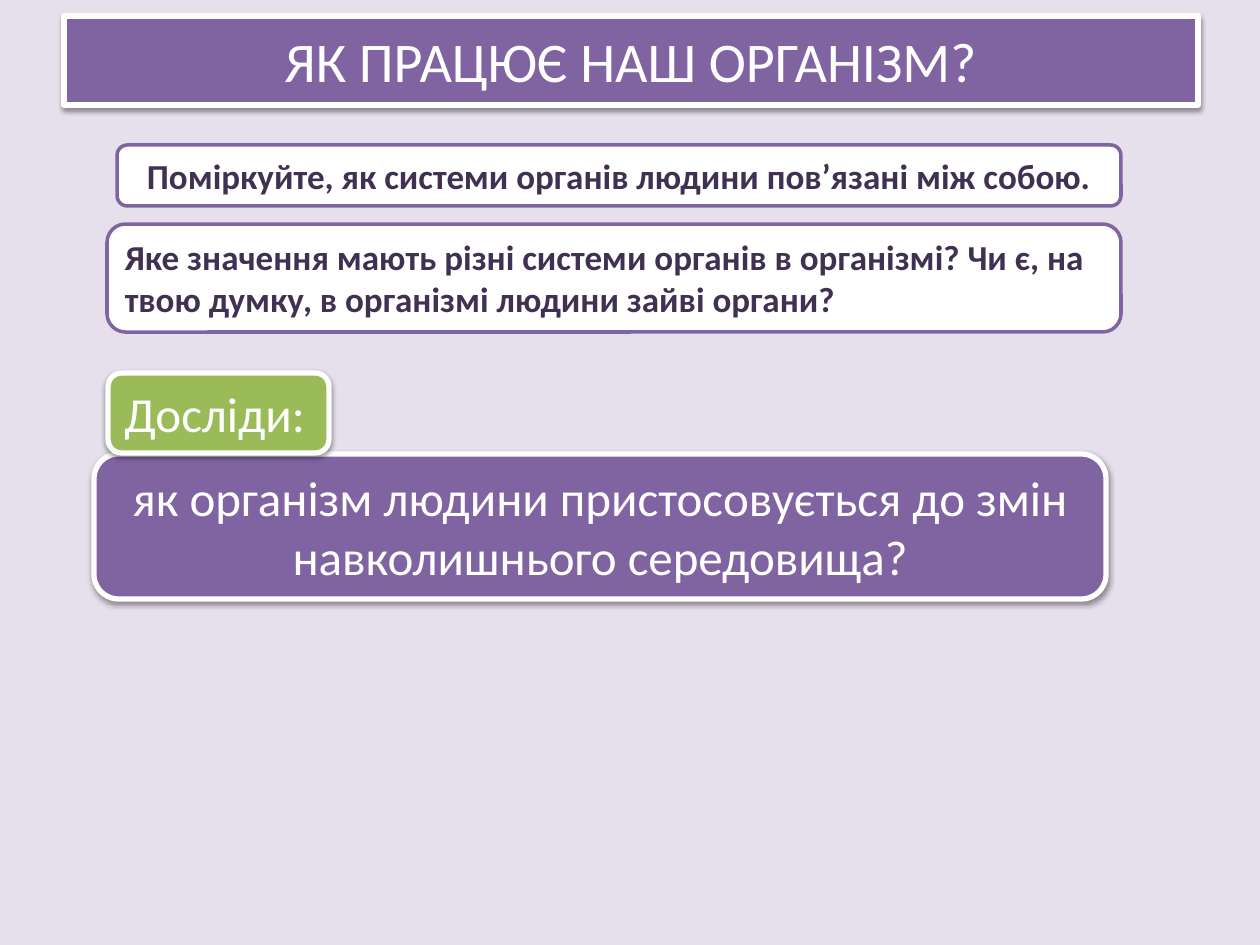
from dataclasses import dataclass

from lxml import etree
from pptx import Presentation
from pptx.dml.color import RGBColor
from pptx.enum.shapes import MSO_SHAPE
from pptx.enum.text import MSO_ANCHOR, MSO_AUTO_SIZE, PP_ALIGN
from pptx.oxml.ns import qn
from pptx.util import Pt

ROUNDED = MSO_SHAPE.ROUNDED_RECTANGLE
LEFT, CENTER = PP_ALIGN.LEFT, PP_ALIGN.CENTER
TOP, MIDDLE = MSO_ANCHOR.TOP, MSO_ANCHOR.MIDDLE
GROW, FIXED = MSO_AUTO_SIZE.SHAPE_TO_FIT_TEXT, MSO_AUTO_SIZE.NONE

WHITE = RGBColor(0xFF, 0xFF, 0xFF)
LAVENDER = RGBColor(0xE6, 0xE0, 0xEC)
PURPLE = RGBColor(0x80, 0x64, 0xA2)
DARK_PURPLE = RGBColor(0x40, 0x31, 0x52)
GREEN = RGBColor(0x9B, 0xBB, 0x59)

PIXELS_PER_INCH = 126
FONT = "Calibri"


@dataclass(frozen=True)
class Style:
    fill: RGBColor
    line: RGBColor
    line_width: int
    text: RGBColor
    bold: bool
    shadow: bool


@dataclass(frozen=True)
class Panel:
    text: str
    left: int
    top: int
    width: int
    height: int
    style: Style
    size: int
    align: PP_ALIGN = CENTER
    anchor: MSO_ANCHOR = TOP
    auto_size: MSO_AUTO_SIZE = GROW
    corner: float = 0.17


QUESTION = Style(WHITE, PURPLE, 2, DARK_PURPLE, True, False)
ACCENT = Style(PURPLE, WHITE, 3, WHITE, False, True)
LABEL = Style(GREEN, WHITE, 3, WHITE, False, True)

PANELS = (
    Panel("ЯК ПРАЦЮЄ НАШ ОРГАНІЗМ?", 64, 16, 1134, 89, ACCENT, 32,
          anchor=MIDDLE, auto_size=FIXED, corner=0),
    Panel("Поміркуйте, як системи органів людини пов’язані між собою.",
          117, 145, 1004, 61, QUESTION, 20),
    Panel("як організм людини пристосовується до змін навколишнього середовища?",
          94, 454, 1012, 145, ACCENT, 28),
    Panel("Яке значення мають різні системи органів в організмі? "
          "Чи є, на твою думку, в організмі людини зайві органи?",
          107, 224, 1014, 108, QUESTION, 20, align=LEFT),
    Panel("Досліди:", 108, 373, 221, 80, LABEL, 28, align=LEFT),
)


def px(length: int) -> int:
    return round(length * 914400 / PIXELS_PER_INCH)


def add_shadow(shape) -> None:
    effects = shape._element.spPr.find(qn("a:effectLst"))
    shadow = etree.SubElement(
        effects, qn("a:outerShdw"), blurRad=str(Pt(3.1)), dist=str(Pt(1.6)),
        dir="5400000", rotWithShape="0")
    color = etree.SubElement(shadow, qn("a:srgbClr"), val="000000")
    etree.SubElement(color, qn("a:alpha"), val="38000")


def add_panel(slide, panel: Panel) -> None:
    style = panel.style
    shape = slide.shapes.add_shape(
        ROUNDED, px(panel.left), px(panel.top), px(panel.width), px(panel.height))
    shape.adjustments[0] = panel.corner
    shape.fill.solid()
    shape.fill.fore_color.rgb = style.fill
    shape.line.color.rgb = style.line
    shape.line.width = Pt(style.line_width)
    shape.shadow.inherit = False
    if style.shadow:
        add_shadow(shape)

    frame = shape.text_frame
    frame.word_wrap = True
    frame.auto_size = panel.auto_size
    frame.vertical_anchor = panel.anchor
    paragraph = frame.paragraphs[0]
    paragraph.text = panel.text
    paragraph.alignment = panel.align
    paragraph.font.name = FONT
    paragraph.font.size = Pt(panel.size)
    paragraph.font.bold = style.bold
    paragraph.font.color.rgb = style.text


def main() -> None:
    presentation = Presentation()
    presentation.slide_width = px(1260)
    presentation.slide_height = px(945)
    slide = presentation.slides.add_slide(presentation.slide_layouts[6])
    slide.background.fill.solid()
    slide.background.fill.fore_color.rgb = LAVENDER
    for panel in PANELS:
        add_panel(slide, panel)
    presentation.save("out.pptx")


if __name__ == "__main__":
    main()
